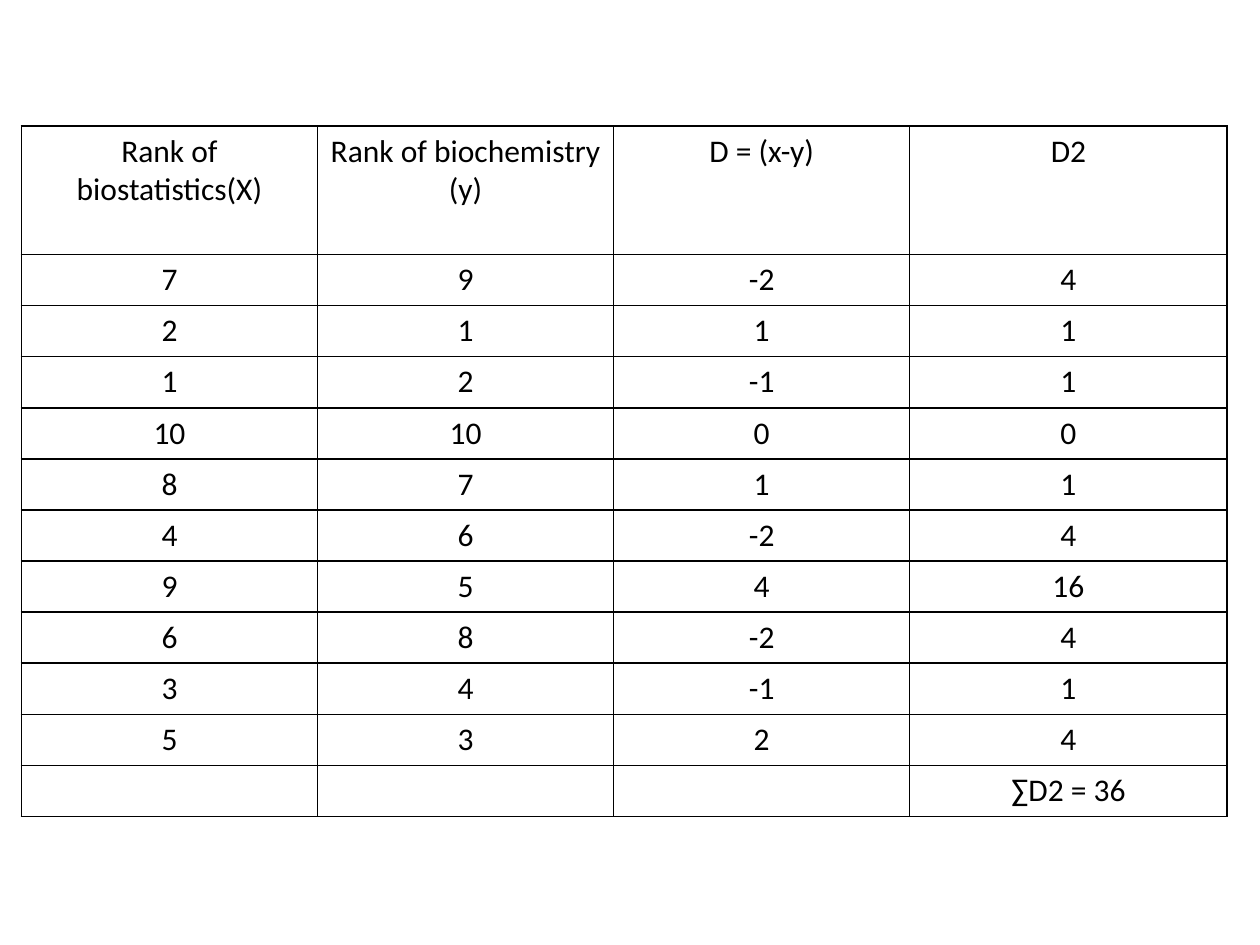
from dataclasses import dataclass

from pptx import Presentation
from pptx.dml.color import RGBColor
from pptx.enum.text import PP_ALIGN as Align
from pptx.oxml.xmlchemy import OxmlElement as Element
from pptx.slide import Slide
from pptx.table import _Cell as Cell
from pptx.util import Inches, Pt


@dataclass(frozen=True)
class Theme:
    font: str = "Calibri"
    size: int = 18
    ink: str = "000000"
    border: int = 1


@dataclass(frozen=True)
class RankPair:
    biostatistics: int
    biochemistry: int

    @property
    def difference(self) -> int:
        return self.biostatistics - self.biochemistry

    @property
    def squared(self) -> int:
        return self.difference ** 2

    def columns(self) -> list[str]:
        return [str(value) for value in (
            self.biostatistics, self.biochemistry, self.difference, self.squared)]


THEME = Theme()
HEADINGS = ["Rank of biostatistics(X)", "Rank of biochemistry (y)", "D = (x-y)", "D2"]
BIOSTATISTICS = (7, 2, 1, 10, 8, 4, 9, 6, 3, 5)
BIOCHEMISTRY = (9, 1, 2, 10, 7, 6, 5, 8, 4, 3)
COLUMN_WIDTHS = (2.35, 2.35, 2.35, 2.52)
HEADING_HEIGHT, ROW_HEIGHT = 1.02, 0.4


def draw_borders(cell: Cell) -> None:
    properties = cell._tc.get_or_add_tcPr()
    for side in ("a:lnL", "a:lnR", "a:lnT", "a:lnB"):
        line = Element(side)
        line.set("w", str(Pt(THEME.border)))
        paint = Element("a:solidFill")
        ink = Element("a:srgbClr")
        ink.set("val", THEME.ink)
        paint.append(ink)
        line.append(paint)
        properties.append(line)


def draw_cell(cell: Cell, wording: str) -> None:
    draw_borders(cell)
    cell.fill.background()
    cell.text = wording
    paragraph = cell.text_frame.paragraphs[0]
    paragraph.alignment = Align.CENTER
    font_format = {"name": THEME.font, "size": Pt(THEME.size), "bold": False}
    for attribute, value in font_format.items():
        setattr(paragraph.font, attribute, value)
    paragraph.font.color.rgb = RGBColor.from_string(THEME.ink)


def draw_rank_table(slide: Slide, rows: list[list[str]]) -> None:
    heights = [HEADING_HEIGHT] + [ROW_HEIGHT] * (len(rows) - 1)
    ranks = slide.shapes.add_table(
        len(rows), len(HEADINGS), Inches(0.17), Inches(1),
        Inches(sum(COLUMN_WIDTHS)), Inches(sum(heights))).table
    for attribute, value in {"first_row": False, "horz_banding": False}.items():
        setattr(ranks, attribute, value)
    for column, width in zip(ranks.columns, COLUMN_WIDTHS):
        column.width = Inches(width)
    for row, height, wordings in zip(ranks.rows, heights, rows):
        row.height = Inches(height)
        for cell, wording in zip(row.cells, wordings):
            draw_cell(cell, wording)


def main() -> None:
    deck = Presentation()
    deck.slide_width, deck.slide_height = Inches(10), Inches(7.5)
    slide = deck.slides.add_slide(deck.slide_layouts[6])
    pairs = [RankPair(x, y) for x, y in zip(BIOSTATISTICS, BIOCHEMISTRY)]
    total = sum(pair.squared for pair in pairs)
    draw_rank_table(slide, [
        HEADINGS,
        *(pair.columns() for pair in pairs),
        ["", "", "", f"∑D2 = {total}"],
    ])
    deck.save("out.pptx")


if __name__ == "__main__":
    main()
